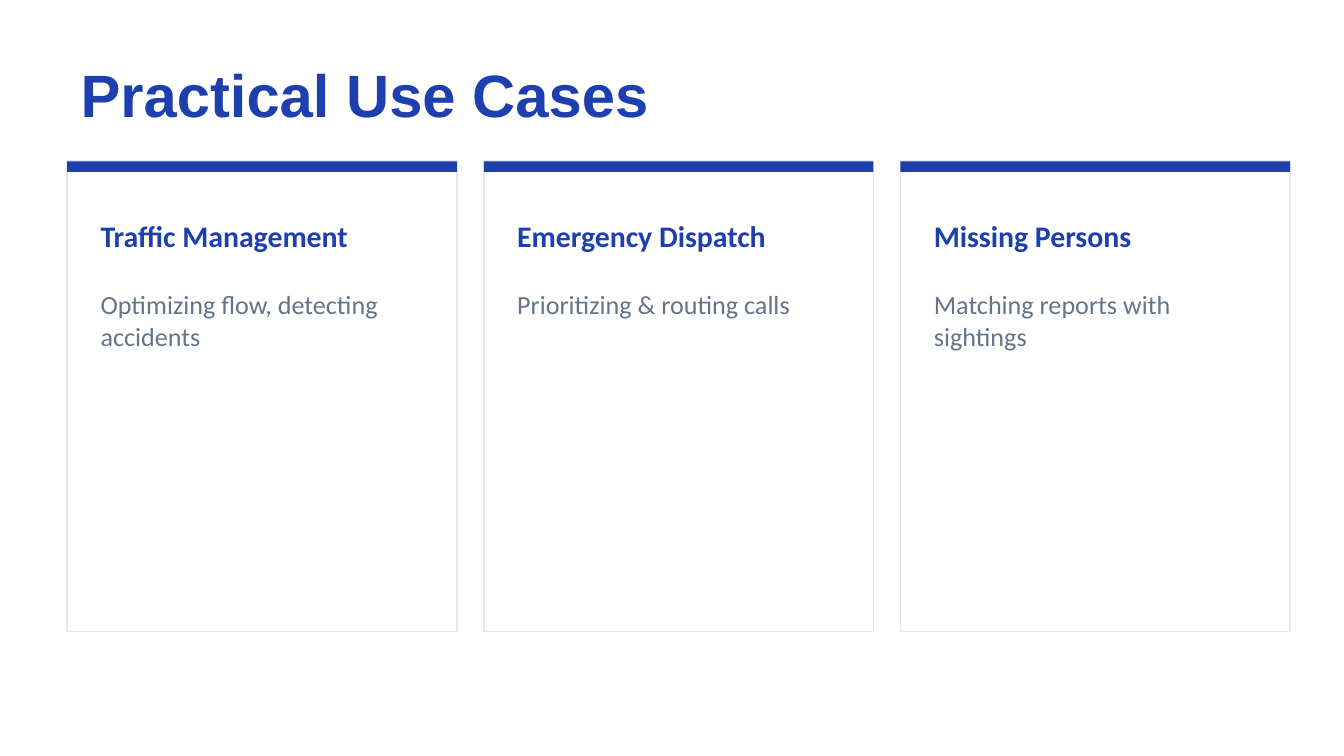
from pptx import Presentation
from pptx.dml.color import RGBColor
from pptx.enum.shapes import MSO_SHAPE
from pptx.enum.text import MSO_ANCHOR, MSO_AUTO_SIZE, PP_ALIGN
from pptx.util import Pt

BLUE, GRAY, WHITE, EDGE = "1E40AF", "64748B", "FFFFFF", "E2E8F0"
HEAD = {"name": "Arial", "size": Pt(32), "bold": True}
LABEL = {"name": "Calibri", "size": Pt(16), "bold": True}
BODY = {"name": "Calibri", "size": Pt(14), "bold": False}

CASES = [
    ("Traffic Management", "Optimizing flow, detecting accidents"),
    ("Emergency Dispatch", "Prioritizing & routing calls"),
    ("Missing Persons", "Matching reports with sightings"),
]
LEFT, TOP, WIDTH, HEIGHT, GAP = 36, 86.4, 208.8, 252, 14.4
INSET = 10.8


def color(code):
    return RGBColor.from_string(code)


class Deck:
    """Holds the slide being drawn and its text style."""

    def __init__(self, slide):
        self.slide = slide
        self.frame = {"word_wrap": True, "auto_size": MSO_AUTO_SIZE.NONE}

    def label(self, shape, text, font, ink, anchor):
        frame = shape.text_frame
        for key, value in {**self.frame, "vertical_anchor": anchor}.items():
            setattr(frame, key, value)
        line = frame.paragraphs[0]
        line.text = text
        line.alignment = PP_ALIGN.LEFT
        for key, value in font.items():
            setattr(line.font, key, value)
        line.font.color.rgb = color(ink)

    def title(self, text, left, top, width, height):
        shape = self.slide.shapes.title
        box = {"left": left, "top": top, "width": width, "height": height}
        for key, value in box.items():
            setattr(shape, key, Pt(value))
        self.label(shape, text, HEAD, BLUE, MSO_ANCHOR.MIDDLE)

    def text(self, text, box, font, ink, anchor=MSO_ANCHOR.TOP):
        shape = self.slide.shapes.add_textbox(*map(Pt, box))
        self.label(shape, text, font, ink, anchor)

    def rect(self, box, fill, edge=None):
        shape = self.slide.shapes.add_shape(MSO_SHAPE.RECTANGLE, *map(Pt, box))
        shape.shadow.inherit = False
        shape.fill.solid()
        shape.fill.fore_color.rgb = color(fill)
        if edge:
            shape.line.color.rgb = color(edge)
            shape.line.width = Pt(1)
        else:
            shape.line.fill.background()

    def card(self, left, name, note):
        self.rect((left, TOP, WIDTH, HEIGHT), WHITE, EDGE)
        self.rect((left, TOP, WIDTH, 5.76), BLUE)
        inner, span = left + INSET, WIDTH - 2 * INSET
        self.text(name, (inner, 108, span, 36), LABEL, BLUE, MSO_ANCHOR.MIDDLE)
        self.text(note, (inner, 151.2, span, 172.8), BODY, GRAY)


def main():
    show = Presentation()
    show.slide_width, show.slide_height = Pt(720), Pt(405)
    deck = Deck(show.slides.add_slide(show.slide_layouts[5]))
    fill = deck.slide.background.fill
    fill.solid()
    fill.fore_color.rgb = color(WHITE)
    deck.title("Practical Use Cases", LEFT, 28.8, 648, 43.2)
    for i, (name, note) in enumerate(CASES):
        deck.card(LEFT + i * (WIDTH + GAP), name, note)
    show.save("out.pptx")


if __name__ == "__main__":
    main()
